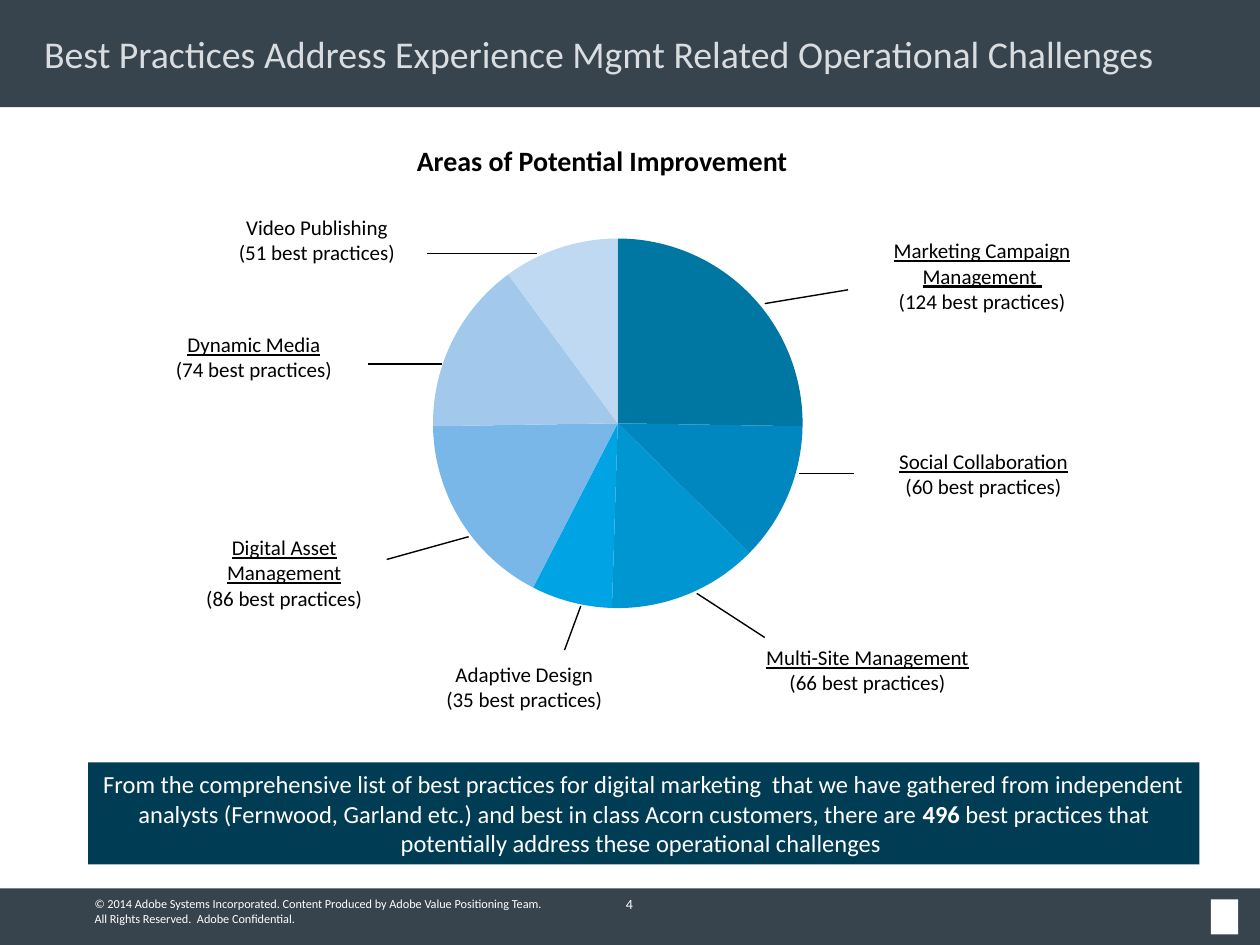
from lxml import etree
from pptx import Presentation
from pptx.chart import data as chart_data
from pptx.dml.color import RGBColor
from pptx.enum import chart as chart_enum, shapes, text
from pptx.oxml import ns
from pptx.util import Pt

FONT = "Calibri"
COLORS = {
    "bar": "37434D",
    "banner": "003C54",
    "title": "DADDE0",
    "white": "FFFFFF",
    "black": "000000",
}
SLICES = [
    (25, "0076A3"),
    (12, "0087BF"),
    (13, "0096D2"),
    (7, "00A4E4"),
    (17, "78B7E8"),
    (15, "A2C9EC"),
    (10, "BFD9F2"),
]
LABEL_WIDTH = 133.2
CALLOUTS = [
    ("Marketing Campaign Management ", 124, True, (494.6, 132.5), (437, 173.5), (484.6, 165.6)),
    ("Social Collaboration", 60, True, (495.4, 252.7), (488.2, 270.7), (456.5, 270.7)),
    ("Multi-Site Management", 66, True, (429.1, 364.7), (437, 364.3), (398.2, 339.1)),
    ("Adaptive Design", 35, False, (233, 374.4), (322.6, 371.5), (331.9, 346.3)),
    ("Digital Asset Management", 86, True, (95.8, 302), (267.8, 306.7), (221, 319.7)),
    ("Dynamic Media", 74, True, (78.5, 185.8), (252.7, 208.1), (210.2, 208.1)),
    ("Video Publishing", 51, False, (114.5, 118.8), (244.1, 144.8), (306.7, 144.8)),
]


def color(name):
    return RGBColor.from_string(COLORS[name])


def place(shape, left, top, width, height):
    shape.left, shape.top = Pt(left), Pt(top)
    shape.width, shape.height = Pt(width), Pt(height)


def add_run(paragraph, content, size=12, fill="black", bold=False, underline=False):
    run = paragraph.add_run()
    run.text = content
    font = run.font
    font.name, font.size = FONT, Pt(size)
    font.bold, font.underline = bold, underline
    font.color.rgb = color(fill)


def fill_frame(frame, paragraphs, align=text.PP_ALIGN.LEFT, anchor=text.MSO_ANCHOR.TOP,
               inset=None, **style):
    frame.word_wrap = True
    frame.auto_size = text.MSO_AUTO_SIZE.NONE
    frame.vertical_anchor = anchor
    if inset is not None:
        frame.margin_left = frame.margin_right = Pt(inset)
        frame.margin_top = frame.margin_bottom = Pt(inset)
    for index, runs in enumerate(paragraphs):
        paragraph = frame.add_paragraph() if index else frame.paragraphs[0]
        paragraph.alignment = align
        for content, extra in runs:
            add_run(paragraph, content, **{**style, **extra})


def add_text(slide, box, paragraphs, **style):
    shape = slide.shapes.add_textbox(*map(Pt, box))
    fill_frame(shape.text_frame, paragraphs, **style)


def add_block(slide, box, fill):
    shape = slide.shapes.add_shape(shapes.MSO_SHAPE.RECTANGLE, *map(Pt, box))
    shape.shadow.inherit = False
    shape.fill.solid()
    shape.fill.fore_color.rgb = color(fill)
    shape.line.fill.background()
    return shape


def add_leader(slide, start, end):
    line = slide.shapes.add_connector(
        shapes.MSO_CONNECTOR.STRAIGHT, *map(Pt, start + end))
    line.line.color.rgb = color("black")
    line.line.width = Pt(0.79)
    etree.SubElement(line._element.spPr, ns.qn("a:effectLst"))


def add_title(slide, content):
    title = slide.shapes.title
    title._element.getparent().append(title._element)
    place(title, 18, 14.4, 684, 32.4)
    fill_frame(title.text_frame, [[(content, {})]], anchor=text.MSO_ANCHOR.MIDDLE,
               size=21.6, fill="title")


def set_plot_layout(chart, **fractions):
    area = chart._chartSpace.chart.plotArea
    for old in area.findall(ns.qn("c:layout")):
        area.remove(old)
    layout = etree.Element(ns.qn("c:layout"))
    manual = etree.SubElement(layout, ns.qn("c:manualLayout"))
    settings = {"layoutTarget": "inner", "xMode": "edge", "yMode": "edge", **fractions}
    for name, value in settings.items():
        etree.SubElement(manual, ns.qn(f"c:{name}")).set("val", str(value))
    area.insert(0, layout)


def add_pie(slide):
    data = chart_data.CategoryChartData()
    data.categories = [str(number) for number in range(1, len(SLICES) + 1)]
    data.add_series("Series 1", [value for value, _ in SLICES])
    chart = slide.shapes.add_chart(
        chart_enum.XL_CHART_TYPE.PIE, Pt(213.8), Pt(120.2), Pt(273.6), Pt(253.4), data).chart
    chart.has_title = False
    chart.has_legend = False
    chart.font.name, chart.font.size = FONT, Pt(18)
    chart.font.color.rgb = color("black")
    plot = chart.plots[0]
    plot.vary_by_categories = True
    for index, (_, fill) in enumerate(SLICES):
        slice_format = plot.series[0].points[index].format
        slice_format.fill.solid()
        slice_format.fill.fore_color.rgb = RGBColor.from_string(fill)
        slice_format.line.fill.background()
    set_plot_layout(chart, x=0.123, y=0.063, w=0.772, h=0.835)


def add_callout(slide, name, count, underline, corner, start, end):
    add_leader(slide, start, end)
    add_text(slide, (*corner, LABEL_WIDTH, 36.4),
             [[(name, {"underline": underline})], [(f"({count} best practices)", {})]],
             align=text.PP_ALIGN.CENTER)


def add_banner(slide):
    banner = add_block(slide, (50.4, 435.6, 635, 58.3), "banner")
    runs = [
        ("From the comprehensive list of best practices for digital marketing  that we have "
         "gathered from independent analysts (Fernwood, Garland etc.) and best in class Acorn "
         "customers, there are ", {}),
        ("496", {"bold": True}),
        (" best practices that potentially address these operational challenges ", {}),
    ]
    fill_frame(banner.text_frame, [runs], align=text.PP_ALIGN.CENTER,
               anchor=text.MSO_ANCHOR.MIDDLE, size=14, fill="white")


def add_footer(slide):
    add_block(slide, (0, 507.6, 720, 32.4), "bar")
    add_block(slide, (692, 514, 15.6, 20), "white")
    add_text(slide, (54, 511.9, 306, 17.3), [
        [("© 2014 Adobe Systems Incorporated. Content Produced by Adobe Value "
          "Positioning Team.", {})],
        [("All Rights Reserved.  Adobe Confidential.", {})],
    ], anchor=text.MSO_ANCHOR.BOTTOM, inset=0, size=7, fill="white")
    add_text(slide, (329.8, 509.8, 59.8, 13), [[("4", {})]], align=text.PP_ALIGN.CENTER,
             anchor=text.MSO_ANCHOR.MIDDLE, size=8, fill="white")


def main():
    presentation = Presentation()
    presentation.slide_width, presentation.slide_height = Pt(720), Pt(540)
    slide = presentation.slides.add_slide(presentation.slide_layouts[5])
    add_block(slide, (0, 0, 720, 61.2), "bar")
    add_title(slide, "Best Practices Address Experience Mgmt Related Operational Challenges")
    add_footer(slide)
    add_pie(slide)
    add_banner(slide)
    add_text(slide, (231.1, 78.5, 307.4, 26.6),
             [[("Areas of Potential Improvement", {})]], size=16, bold=True)
    for callout in CALLOUTS:
        add_callout(slide, *callout)
    presentation.save("out.pptx")


if __name__ == "__main__":
    main()
